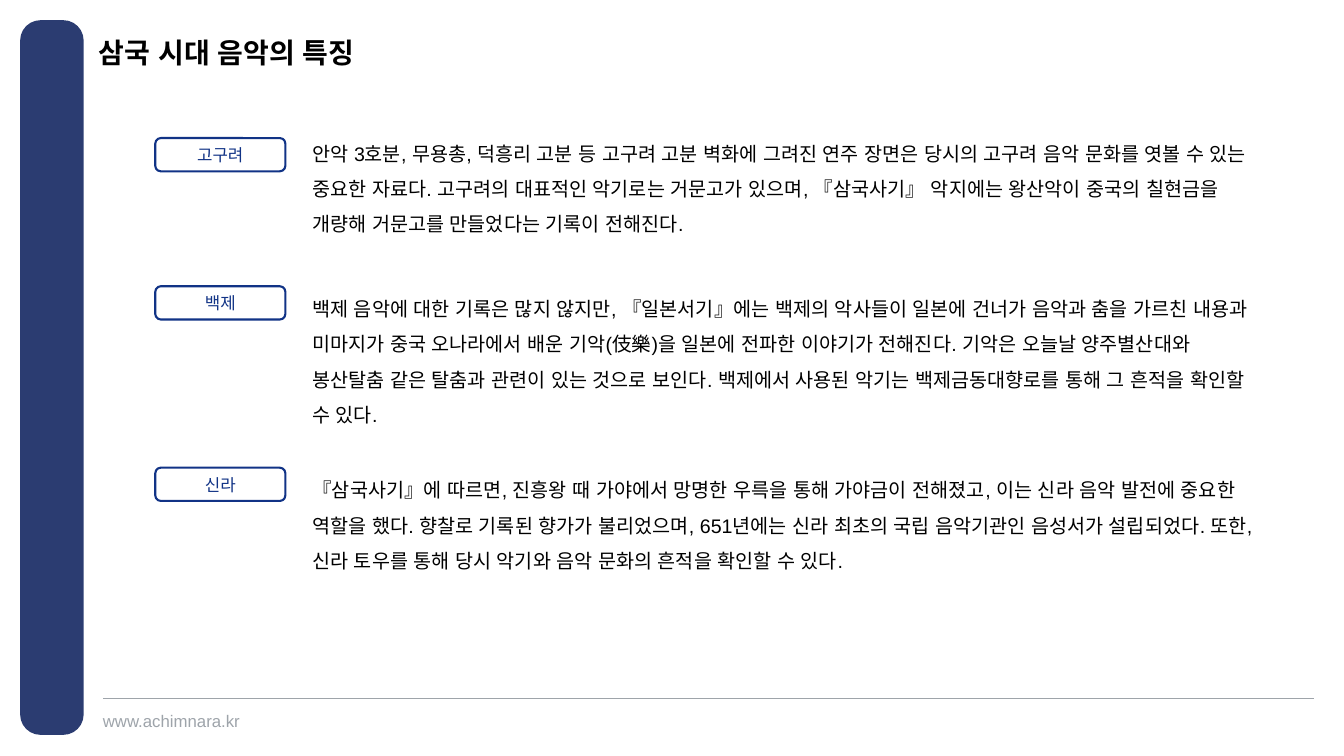
from dataclasses import dataclass

from pptx import Presentation
from pptx.dml.color import RGBColor as RGB
from pptx.enum.lang import MSO_LANGUAGE_ID as LANG
from pptx.enum.shapes import MSO_CONNECTOR, MSO_SHAPE
from pptx.enum.text import MSO_ANCHOR as ANCHOR, PP_ALIGN as ALIGN
from pptx.oxml.ns import qn
from pptx.util import Inches, Pt


@dataclass(frozen=True)
class Theme:
    white: RGB = RGB.from_string("FFFFFF")
    black: RGB = RGB.from_string("000000")
    navy: RGB = RGB.from_string("2B3C71")
    blue: RGB = RGB.from_string("113386")
    gray: RGB = RGB.from_string("9EA4AA")
    latin: str = "Arial"
    korean: str = "Noto Sans CJK KR"
    title: int = 20
    body: int = 14
    small: int = 12


@dataclass(frozen=True)
class Kingdom:
    name: str
    label_top: float
    text_top: float
    height: float
    text: str


T = Theme()

KINGDOMS = [
    Kingdom("고구려", 1.37, 1.24, 1.12,
            "안악 3호분, 무용총, 덕흥리 고분 등 고구려 고분 벽화에 그려진 연주 장면은 "
            "당시의 고구려 음악 문화를 엿볼 수 있는 중요한 자료다. 고구려의 대표적인 "
            "악기로는 거문고가 있으며, 『삼국사기』 악지에는 왕산악이 중국의 칠현금을 "
            "개량해 거문고를 만들었다는 기록이 전해진다."),
    Kingdom("백제", 2.84, 2.78, 1.47,
            "백제 음악에 대한 기록은 많지 않지만, 『일본서기』에는 백제의 악사들이 "
            "일본에 건너가 음악과 춤을 가르친 내용과 미마지가 중국 오나라에서 배운 "
            "기악(伎樂)을 일본에 전파한 이야기가 전해진다. 기악은 오늘날 양주별산대와 "
            "봉산탈춤 같은 탈춤과 관련이 있는 것으로 보인다. 백제에서 사용된 악기는 "
            "백제금동대향로를 통해 그 흔적을 확인할 수 있다."),
    Kingdom("신라", 4.64, 4.58, 1.12,
            "『삼국사기』에 따르면, 진흥왕 때 가야에서 망명한 우륵을 통해 가야금이 "
            "전해졌고, 이는 신라 음악 발전에 중요한 역할을 했다. 향찰로 기록된 향가가 "
            "불리었으며, 651년에는 신라 최초의 국립 음악기관인 음성서가 설립되었다. "
            "또한, 신라 토우를 통해 당시 악기와 음악 문화의 흔적을 확인할 수 있다."),
]


def write(sp, text: str, size: int, color: RGB, font: str = T.latin,
          bold: bool = False, **para) -> None:
    """Put one formatted paragraph into a shape."""
    p = sp.text_frame.paragraphs[0]
    for key, value in para.items():
        setattr(p, key, value)
    r = p.add_run()
    r.text = text
    formats = {"size": Pt(size), "bold": bold, "name": font,
               "language_id": LANG.KOREAN}
    for key, value in formats.items():
        setattr(r.font, key, value)
    r.font.color.rgb = color
    ea = r.font._element.makeelement(qn("a:ea"), {"typeface": T.korean})
    r.font._element.append(ea)


def add_text(s, box: tuple, inset: bool = True):
    """Add a wrapping text box, with or without inner margins."""
    sp = s.shapes.add_textbox(*map(Inches, box))
    tf = sp.text_frame
    tf.word_wrap = True
    if not inset:
        for side in ("left", "right", "top", "bottom"):
            setattr(tf, f"margin_{side}", 0)
    return sp


def add_round_rect(s, box: tuple, fill: RGB):
    """Add a flat rounded rectangle without outline."""
    sp = s.shapes.add_shape(MSO_SHAPE.ROUNDED_RECTANGLE, *map(Inches, box))
    sp.shadow.inherit = False
    sp.fill.solid()
    sp.fill.fore_color.rgb = fill
    sp.line.fill.background()
    return sp


def add_frame(s) -> None:
    """Side bar, footer rule and web address."""
    bar = add_round_rect(s, (0.2, 0.2, 0.63, 7.09), T.navy)
    bar.adjustments[0] = 0.32
    rule = s.shapes.add_connector(
        MSO_CONNECTOR.STRAIGHT, *map(Inches, (13.03, 6.93, 1.02, 6.93)))
    rule.line.color.rgb = T.gray
    rule.line.width = Pt(0.5)
    sp_pr = rule._element.spPr
    sp_pr.append(sp_pr.makeelement(qn("a:effectLst"), {}))
    footer = add_text(s, (1.02, 7.05, 1.5, 0.2), inset=False)
    write(footer, "www.achimnara.kr", T.small, T.gray)


def add_kingdom(s, k: Kingdom) -> None:
    """Outlined name label with its description beside it."""
    label = add_round_rect(s, (1.54, k.label_top, 1.29, 0.33), T.white)
    label.line.color.rgb = T.blue
    label.line.width = Pt(1.5)
    label.text_frame.vertical_anchor = ANCHOR.MIDDLE
    write(label, k.name, T.small, T.blue, T.korean, alignment=ALIGN.CENTER)
    body = add_text(s, (3, k.text_top, 9.54, k.height))
    write(body, k.text, T.body, T.black, line_spacing=1.5)


def main() -> None:
    prs = Presentation()
    prs.slide_width, prs.slide_height = Inches(13.33), Inches(7.5)
    s = prs.slides.add_slide(prs.slide_layouts[6])
    add_frame(s)
    # Title
    title = add_text(s, (0.98, 0.39, 7.87, 0.28), inset=False)
    write(title, "삼국 시대 음악의 특징", T.title, T.black, bold=True,
          line_spacing=0.9)
    # Three kingdoms
    for k in KINGDOMS:
        add_kingdom(s, k)
    prs.save("out.pptx")


if __name__ == "__main__":
    main()
